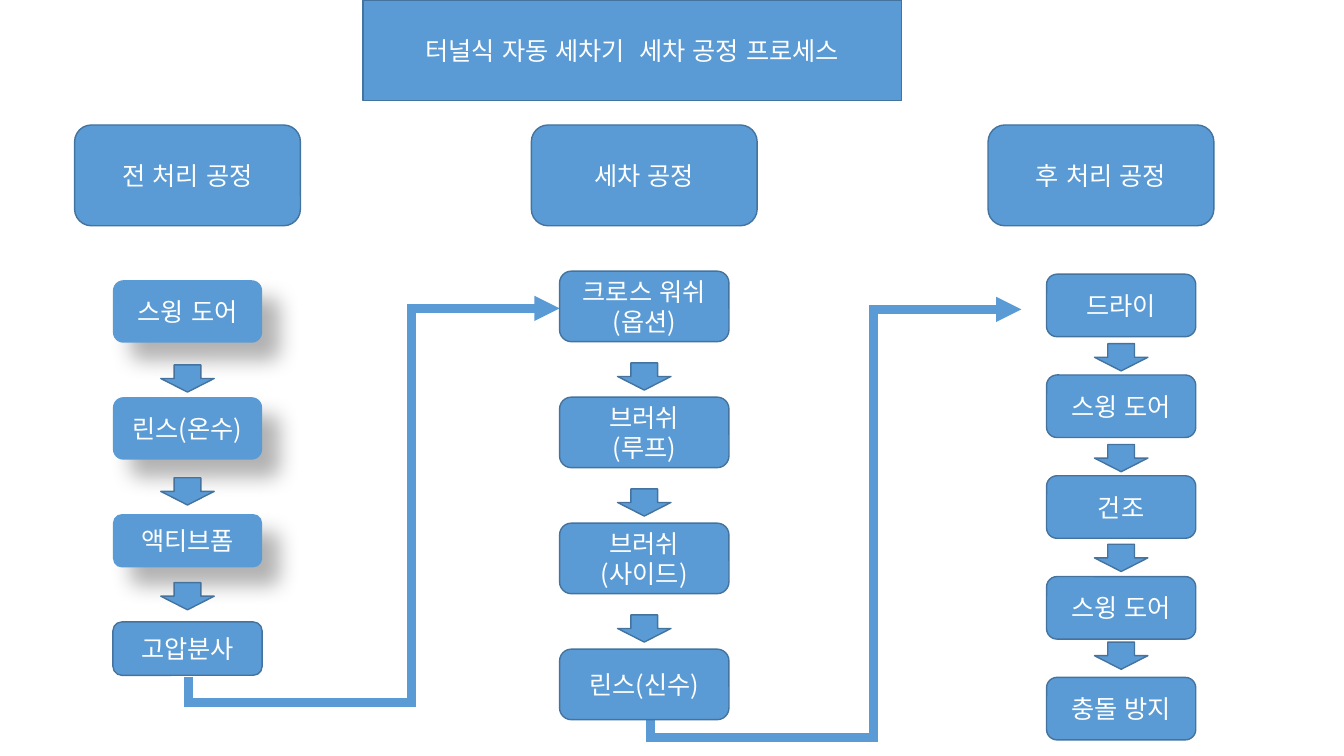
from pptx import Presentation
from pptx import util as u
from pptx.dml.color import RGBColor
from pptx.enum import lang, shapes, text
from pptx.oxml import ns, parse_xml

BLUE = RGBColor(0x5B, 0x9B, 0xD5)
DARK_BLUE = RGBColor(0x43, 0x73, 0x9E)
WHITE = RGBColor(0xFF, 0xFF, 0xFF)
FONT = "Noto Sans CJK KR"
NAMESPACE = ns.nsdecls("a")
SHADOW = (
    f'<a:effectLst {NAMESPACE}><a:outerShdw blurRad="{u.Pt(15)}" dist="{u.Pt(18)}" '
    'dir="2700000" algn="tl" rotWithShape="0"><a:srgbClr val="000000">'
    '<a:alpha val="30000"/></a:srgbClr></a:outerShdw></a:effectLst>'
)

HEADERS = ["전 처리 공정", "세차 공정", "후 처리 공정"]
HEADER_LEFT, HEADER_STEP = 0.74, 4.53

PRE_STEPS = [
    (2.78, 0.62, ["스윙 도어"], True),
    (3.94, 0.62, ["린스(온수)"], True),
    (5.1, 0.53, ["액티브폼"], True),
    (6.17, 0.53, ["고압분사"], False),
]
WASH_STEPS = [
    (2.69 + 1.25 * index, 0.7, lines, False)
    for index, lines in enumerate(
        [["크로스 워쉬", "(옵션)"], ["브러쉬", "(루프)"], ["브러쉬", "(사이드)"], ["린스(신수)"]]
    )
]
POST_STEPS = [
    (2.72 + index, 0.62, [line], False)
    for index, line in enumerate(["드라이", "스윙 도어", "건조", "스윙 도어", "충돌 방지"])
]
COLUMNS = [
    (1.86, 1.48, PRE_STEPS, [3.62, 4.74, 5.78]),
    (6.39, 1.68, WASH_STEPS, [3.6, 4.85, 6.1]),
    (11.12, 1.48, POST_STEPS, [3.41, 4.41, 5.4, 6.37]),
]


class ProcessSlide:
    def __init__(self, presentation):
        self.slide = presentation.slides.add_slide(presentation.slide_layouts[5])

    def paint(self, shape, outlined=True):
        shape.fill.solid()
        shape.fill.fore_color.rgb = BLUE
        if outlined:
            shape.line.color.rgb = DARK_BLUE
            shape.line.width = u.Pt(1)
        else:
            shape.line.fill.background()

    def label(self, shape, lines):
        frame = shape.text_frame
        frame.word_wrap = True
        frame.auto_size = text.MSO_AUTO_SIZE.NONE
        frame.vertical_anchor = text.MSO_ANCHOR.MIDDLE
        for index, line in enumerate(lines):
            paragraph = frame.add_paragraph() if index else frame.paragraphs[0]
            paragraph.alignment = text.PP_ALIGN.CENTER
            run = paragraph.add_run()
            run.text = line
            run.font.size = u.Pt(18)
            run.font.name = FONT
            run.font.color.rgb = WHITE
            run.font.language_id = lang.MSO_LANGUAGE_ID.KOREAN
            run.font._element.find(ns.qn("a:latin")).addnext(
                parse_xml(f'<a:ea {NAMESPACE} typeface="{FONT}"/>')
            )

    def title(self, left, top, width, height, line):
        shape = self.slide.shapes.title
        shape.left, shape.top = u.Inches(left), u.Inches(top)
        shape.width, shape.height = u.Inches(width), u.Inches(height)
        shape._element.spPr.find(ns.qn("a:xfrm")).addnext(
            parse_xml(f'<a:prstGeom {NAMESPACE} prst="roundRect"><a:avLst/></a:prstGeom>')
        )
        self.paint(shape)
        self.label(shape, [line])

    def shape(self, kind, left, top, width, height, outlined=True):
        shape = self.slide.shapes.add_shape(
            kind, u.Inches(left), u.Inches(top), u.Inches(width), u.Inches(height)
        )
        shape.shadow.inherit = False
        self.paint(shape, outlined)
        return shape

    def box(self, left, top, width, height, lines, shadowed=False):
        kind = shapes.MSO_SHAPE.ROUNDED_RECTANGLE
        shape = self.shape(kind, left, top, width, height, not shadowed)
        self.label(shape, lines)
        if shadowed:
            properties = shape._element.spPr
            properties.replace(properties.find(ns.qn("a:effectLst")), parse_xml(SHADOW))

    def arrow(self, center, top):
        width = 0.53
        self.shape(shapes.MSO_SHAPE.DOWN_ARROW, center - width / 2, top, width, 0.27)

    def link(self, start_x, start_y, end_x, end_y, drop):
        rise, run = start_y - end_y, end_x - start_x
        center_x, center_y = (start_x + end_x) / 2, (start_y + end_y) / 2
        connector = self.slide.shapes.add_connector(
            shapes.MSO_CONNECTOR.ELBOW,
            u.Inches(center_x + rise / 2), u.Inches(center_y + run / 2),
            u.Inches(center_x - rise / 2), u.Inches(center_y - run / 2),
        )
        connector.line.color.rgb = BLUE
        connector.line.width = u.Pt(6)
        properties = connector._element.spPr
        properties.find(ns.qn("a:xfrm")).set("rot", "5400000")
        geometry = properties.find(ns.qn("a:prstGeom"))
        properties.replace(geometry, parse_xml(
            f'<a:prstGeom {NAMESPACE} prst="bentConnector4"><a:avLst>'
            f'<a:gd name="adj1" fmla="val {round(-drop / rise * 100000)}"/>'
            '<a:gd name="adj2" fmla="val 60100"/></a:avLst></a:prstGeom>'
        ))
        line = properties.find(ns.qn("a:ln"))
        line.append(parse_xml(f'<a:miter {NAMESPACE} lim="800000"/>'))
        line.append(parse_xml(f'<a:tailEnd {NAMESPACE} type="triangle"/>'))
        properties.append(parse_xml(f"<a:effectLst {NAMESPACE}/>"))


def main():
    presentation = Presentation()
    presentation.slide_width = u.Inches(13.33)
    presentation.slide_height = u.Inches(7.5)
    process = ProcessSlide(presentation)

    process.title(3.6, 0, 5.34, 1, "터널식 자동 세차기  세차 공정 프로세스")
    process.link(1.87, 6.72, 5.55, 3.06, 0.25)
    process.link(6.45, 6.73, 10.13, 3.07, 0.59)
    for index, header in enumerate(HEADERS):
        process.box(HEADER_LEFT + HEADER_STEP * index, 1.24, 2.24, 1, [header])
    for center, width, steps, arrow_tops in COLUMNS:
        for top, height, lines, shadowed in steps:
            process.box(center - width / 2, top, width, height, lines, shadowed)
        for top in arrow_tops:
            process.arrow(center, top)

    presentation.save("out.pptx")


if __name__ == "__main__":
    main()
